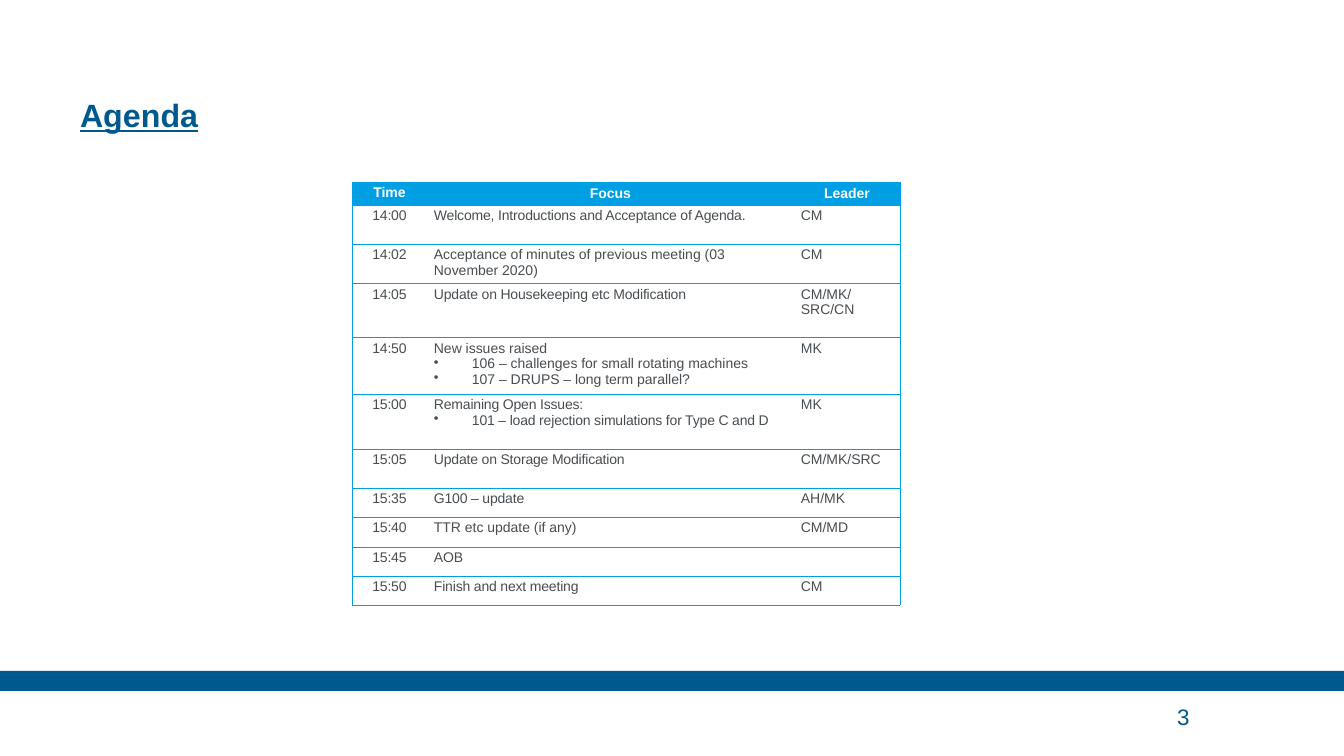
from lxml.etree import SubElement
from pptx import Presentation
from pptx.dml.color import RGBColor
from pptx.enum.shapes import MSO_SHAPE
from pptx.enum.text import MSO_ANCHOR, PP_ALIGN
from pptx.oxml.ns import qn
from pptx.util import Pt

NAVY = RGBColor(0x00, 0x59, 0x8E)
SKY = RGBColor(0x00, 0x9F, 0xE3)
GREY = RGBColor(0x48, 0x4D, 0x51)
WHITE = RGBColor(0xFF, 0xFF, 0xFF)
FONT = "Arial"
PX = 914400 / 100.8
NO_STYLE = "{2D5ABB26-0587-4C30-8999-92F81FD0307C}"

TITLE = "Agenda"
PAGE = "3"
HEADINGS = ("Time", "Focus", "Leader")
AGENDA = [
    ("14:00", ["Welcome, Introductions and Acceptance of Agenda."], "CM"),
    ("14:02", ["Acceptance of minutes of previous meeting (03 November 2020)"], "CM"),
    ("14:05", ["Update on Housekeeping etc Modification"], "CM/MK/SRC/CN"),
    ("14:50", ["New issues raised", "106 – challenges for small rotating machines",
               "107 – DRUPS – long term parallel?"], "MK"),
    ("15:00", ["Remaining Open Issues:",
               "101 – load rejection simulations for Type C and D"], "MK"),
    ("15:05", ["Update on Storage Modification"], "CM/MK/SRC"),
    ("15:35", ["G100 – update"], "AH/MK"),
    ("15:40", ["TTR etc update (if any)"], "CM/MD"),
    ("15:45", ["AOB"], ""),
    ("15:50", ["Finish and next meeting"], "CM"),
]
UNTIGHTENED = {"14:02", "14:50", "15:40"}
COLUMN_WIDTHS = (75, 367, 106)
ROW_HEIGHTS = (23, 39, 39, 54, 55, 55, 39, 29, 30, 29, 29)


def px(length):
    return round(length * PX)


def box(left, top, width, height):
    return px(left), px(top), px(width), px(height)


def style_font(font, size, color, bold=False):
    font.name, font.size, font.bold = FONT, Pt(size), bold
    font.color.rgb = color


def clear_margins(frame, anchor):
    frame.margin_left = frame.margin_right = frame.margin_top = frame.margin_bottom = 0
    frame.vertical_anchor = anchor
    frame.word_wrap = True


def border_cell(cell, sides):
    properties = cell._tc.get_or_add_tcPr()
    for side in "LRTB":
        line = SubElement(properties, qn(f"a:ln{side}"), w=str(Pt(0.5)))
        if side in sides:
            fill = SubElement(line, qn("a:solidFill"))
            SubElement(fill, qn("a:srgbClr"), val=str(SKY))
        else:
            SubElement(line, qn("a:noFill"))


def fill_cell(cell, lines, color, bold=False, centred=False, tight=False):
    cell.margin_left = cell.margin_right = px(7)
    cell.margin_top = cell.margin_bottom = px(3)
    cell.text_frame.text = "\n".join(lines)
    for number, paragraph in enumerate(cell.text_frame.paragraphs):
        paragraph.alignment = PP_ALIGN.CENTER if centred else PP_ALIGN.LEFT
        if number:
            properties = paragraph._p.get_or_add_pPr()
            properties.set("marL", str(px(38)))
            properties.set("indent", str(-px(38)))
            SubElement(properties, qn("a:buChar"), char="•")
        for run in paragraph.runs:
            style_font(run.font, 10, color, bold)
            if tight:
                run.font._element.set("spc", "-10")
        if not paragraph.runs:
            SubElement(paragraph._p, qn("a:endParaRPr"), sz="1000")


def add_agenda(slide):
    rows, columns = len(ROW_HEIGHTS), len(COLUMN_WIDTHS)
    frame = slide.shapes.add_table(
        rows, columns, *box(352, 182, sum(COLUMN_WIDTHS), sum(ROW_HEIGHTS)))
    table = frame.table
    table.horz_banding = False
    table._tbl.tblPr.find(qn("a:tableStyleId")).text = NO_STYLE
    for column, width in zip(table.columns, COLUMN_WIDTHS):
        column.width = px(width)
    for row, height in zip(table.rows, ROW_HEIGHTS):
        row.height = px(height)

    for r in range(rows):
        for c in range(columns):
            cell = table.cell(r, c)
            border_cell(cell, "TB" + "L" * (c == 0) + "R" * (c == columns - 1))
            if r == 0:
                cell.fill.solid()
                cell.fill.fore_color.rgb = SKY
                cell.vertical_anchor = MSO_ANCHOR.MIDDLE if c else MSO_ANCHOR.TOP
                fill_cell(cell, [HEADINGS[c]], WHITE, bold=True, centred=True)
            else:
                time, focus, leader = AGENDA[r - 1]
                cell.fill.background()
                tight = c == 0 or (c == 1 and time not in UNTIGHTENED)
                fill_cell(cell, ([time], focus, [leader])[c], GREY,
                          centred=c == 0, tight=tight)


def main():
    """Build the agenda slide."""
    deck = Presentation()
    deck.slide_width, deck.slide_height = px(1344), px(756)
    slide = deck.slides.add_slide(deck.slide_layouts[5])

    band = slide.shapes.add_shape(MSO_SHAPE.RECTANGLE, *box(0, 671, 1344, 20))
    band.shadow.inherit = False
    band.fill.solid()
    band.fill.fore_color.rgb = NAVY
    band.line.fill.background()

    title = slide.shapes.title
    title.left, title.top, title.width, title.height = box(80, 31, 992, 103)
    clear_margins(title.text_frame, MSO_ANCHOR.BOTTOM)
    title.text_frame.text = TITLE
    heading = title.text_frame.paragraphs[0]
    heading.alignment = PP_ALIGN.LEFT
    heading.line_spacing = Pt(30)
    style_font(heading.runs[0].font, 23, NAVY, bold=True)
    heading.runs[0].font.underline = True

    page = slide.shapes.add_textbox(*box(1177, 697, 124, 39))
    clear_margins(page.text_frame, MSO_ANCHOR.MIDDLE)
    page.text_frame.text = PAGE
    style_font(page.text_frame.paragraphs[0].runs[0].font, 16, NAVY)

    add_agenda(slide)
    deck.save("out.pptx")


if __name__ == "__main__":
    main()
